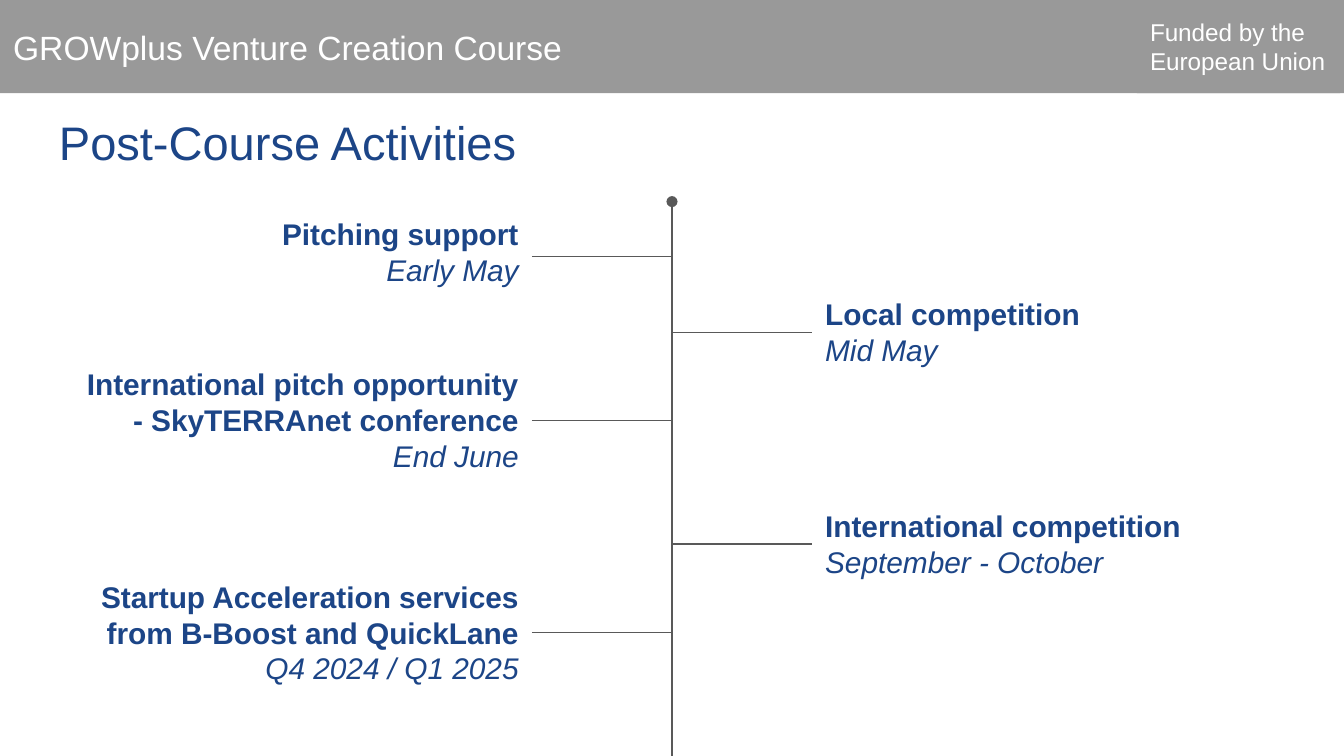
from dataclasses import dataclass

from lxml.etree import SubElement
from pptx import Presentation
from pptx.dml.color import RGBColor
from pptx.enum.shapes import MSO_CONNECTOR, MSO_SHAPE
from pptx.enum.text import MSO_ANCHOR, PP_ALIGN
from pptx.oxml.ns import qn
from pptx.util import Pt

FONT = "Arial"
NAVY, GREY, DARK, WHITE = "1C4587", "999999", "595959", "FFFFFF"
WIDTH, HEIGHT = 720, 405
AXIS_X, AXIS_TOP, BRANCH = 360, 108, 75
INSET = 7.2


@dataclass
class Milestone:
    title: str
    date: str
    y: float
    width: float
    height: float
    left_side: bool


MILESTONES = [
    Milestone("Pitching support", "Early May", 137.5, 199, 58, True),
    Milestone("Local competition", "Mid May", 178, 236, 53.3, False),
    Milestone("International pitch opportunity - SkyTERRAnet conference",
              "End June", 225.2, 253, 72.7, True),
    Milestone("International competition", "September - October",
              291.5, 236, 53.3, False),
    Milestone("Startup Acceleration services from B-Boost and QuickLane",
              "Q4 2024 / Q1 2025", 339, 261, 72.7, True),
]


def rgb(value: str) -> RGBColor:
    return RGBColor.from_string(value)


def add_text(p, text: str, *, size: float, color: str, bold: bool = False,
             italic: bool = False, align=PP_ALIGN.LEFT) -> None:
    p.alignment = align
    r = p.add_run()
    r.text = text
    r.font.name = FONT
    r.font.size = Pt(size)
    r.font.bold = bold
    r.font.italic = italic
    r.font.color.rgb = rgb(color)


def set_frame(sp, anchor=MSO_ANCHOR.TOP):
    tf = sp.text_frame
    tf.word_wrap = True
    tf.vertical_anchor = anchor
    tf.margin_left = tf.margin_right = Pt(INSET)
    tf.margin_top = tf.margin_bottom = Pt(INSET)
    return tf


def add_box(s, x: float, y: float, w: float, h: float):
    return set_frame(s.shapes.add_textbox(Pt(x), Pt(y), Pt(w), Pt(h)))


def add_band(s, x: float, y: float, w: float, h: float, text: str, size: float) -> None:
    sp = s.shapes.add_shape(MSO_SHAPE.RECTANGLE, Pt(x), Pt(y), Pt(w), Pt(h))
    sp.shadow.inherit = False
    sp.fill.solid()
    sp.fill.fore_color.rgb = rgb(GREY)
    sp.line.fill.background()
    tf = set_frame(sp, MSO_ANCHOR.MIDDLE)
    add_text(tf.paragraphs[0], text, size=size, color=WHITE)


def add_line(s, x1: float, y1: float, x2: float, y2: float, head: str = "") -> None:
    sp = s.shapes.add_connector(MSO_CONNECTOR.STRAIGHT, Pt(x1), Pt(y1), Pt(x2), Pt(y2))
    sp.line.color.rgb = rgb(DARK)
    sp.line.width = Pt(0.75)
    if head:
        SubElement(sp.line._get_or_add_ln(), qn("a:headEnd"), type=head)
    SubElement(sp._element.spPr, qn("a:effectLst"))


def add_milestone(s, m: Milestone) -> None:
    if m.left_side:
        end = AXIS_X - BRANCH
        x, align = end - m.width, PP_ALIGN.RIGHT
    else:
        end = AXIS_X + BRANCH
        x, align = end, PP_ALIGN.LEFT
    tf = add_box(s, x, m.y - m.height / 2, m.width, m.height)
    add_text(tf.paragraphs[0], m.title, size=16, color=NAVY, bold=True, align=align)
    add_text(tf.add_paragraph(), m.date, size=16, color=NAVY, italic=True, align=align)
    add_line(s, min(AXIS_X, end), m.y, max(AXIS_X, end), m.y)


def main() -> None:
    prs = Presentation()
    prs.slide_width, prs.slide_height = Pt(WIDTH), Pt(HEIGHT)
    s = prs.slides.add_slide(prs.slide_layouts[6])
    add_band(s, 0, 0, WIDTH, 50, "GROWplus Venture Creation Course", 18)
    add_band(s, 609, 0, 109, 50, "Funded by the European Union", 13)
    title = add_box(s, 24.5, 53.5, 671, 45)
    add_text(title.paragraphs[0], "Post-Course Activities", size=25.2, color=NAVY)
    add_line(s, AXIS_X, AXIS_TOP, AXIS_X, HEIGHT, head="oval")
    for m in MILESTONES:
        add_milestone(s, m)
    prs.save("out.pptx")


if __name__ == "__main__":
    main()
